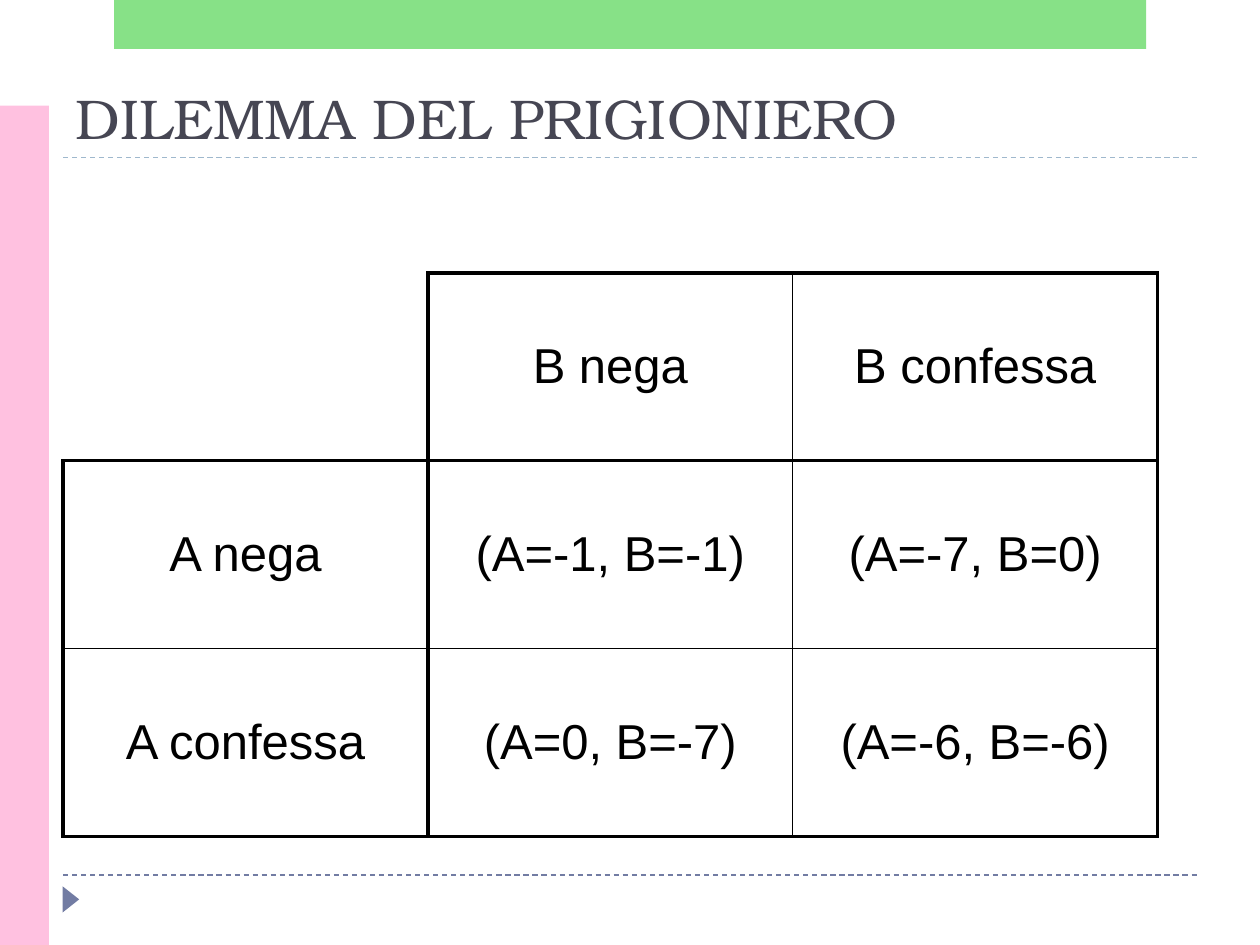
"""Builds the prisoner's dilemma payoff slide."""
from dataclasses import dataclass

from lxml import etree
from pptx import Presentation
from pptx.dml.color import RGBColor
from pptx.enum.dml import MSO_LINE
from pptx.enum.shapes import MSO_CONNECTOR, MSO_SHAPE
from pptx.enum.text import MSO_ANCHOR, MSO_AUTO_SIZE, PP_ALIGN
from pptx.oxml.ns import qn
from pptx.util import Pt

DASH = MSO_LINE.DASH
STRAIGHT = MSO_CONNECTOR.STRAIGHT
RECTANGLE, TRIANGLE = MSO_SHAPE.RECTANGLE, MSO_SHAPE.ISOSCELES_TRIANGLE
MIDDLE, BOTTOM = MSO_ANCHOR.MIDDLE, MSO_ANCHOR.BOTTOM
NO_FIT = MSO_AUTO_SIZE.NONE
LEFT, CENTER = PP_ALIGN.LEFT, PP_ALIGN.CENTER
TITLE_ONLY = 5


@dataclass(frozen=True)
class Theme:
    title_font: str = "TeX Gyre Bonum"
    table_font: str = "Arial"
    title_size: float = 32
    table_size: float = 28
    title: str = "464653"
    ink: str = "000000"
    accent: str = "727CA3"
    title_rule: str = "9FB8CD"
    side_band: str = "FFC1E0"
    top_band: str = "62D862"
    rule: float = 0.75
    thick: float = 2.25
    thin: float = 1


class SlideBuilder:
    def __init__(self, slide, theme):
        self.s = slide
        self.theme = theme

    def run(self, p, text, font, size, color):
        r = p.add_run()
        r.text = text
        r.font.name = font
        r.font.size = Pt(size)
        r.font.color.rgb = RGBColor.from_string(color)

    def title(self, text, x, y, w, h):
        sp = self.s.shapes.title
        sp.left, sp.top, sp.width, sp.height = Pt(x), Pt(y), Pt(w), Pt(h)
        tf = sp.text_frame
        tf.word_wrap = True
        tf.auto_size = NO_FIT
        tf.vertical_anchor = BOTTOM
        p = tf.paragraphs[0]
        p.alignment = LEFT
        self.run(p, text, self.theme.title_font, self.theme.title_size, self.theme.title)

    def shape(self, kind, x, y, w, h, color, rotation=0, opacity=100):
        sp = self.s.shapes.add_shape(kind, Pt(x), Pt(y), Pt(w), Pt(h))
        sp.shadow.inherit = False
        sp.rotation = rotation
        sp.fill.solid()
        sp.fill.fore_color.rgb = RGBColor.from_string(color)
        sp.line.fill.background()
        if opacity < 100:
            clr = sp.fill._xPr.find(qn("a:solidFill"))[0]
            etree.SubElement(clr, qn("a:alpha"), val=str(opacity * 1000))

    def rule(self, x1, x2, y, color):
        line = self.s.shapes.add_connector(STRAIGHT, Pt(x1), Pt(y), Pt(x2), Pt(y))
        line.line.color.rgb = RGBColor.from_string(color)
        line.line.width = Pt(self.theme.rule)
        line.line.dash_style = DASH
        etree.SubElement(line._element.spPr, qn("a:effectLst"))

    def border(self, cell, side, width):
        ln = etree.SubElement(cell._tc.get_or_add_tcPr(), qn(f"a:ln{side}"), w=str(Pt(width)))
        if width:
            fill = etree.SubElement(ln, qn("a:solidFill"))
            etree.SubElement(fill, qn("a:srgbClr"), val=self.theme.ink)
        else:
            etree.SubElement(ln, qn("a:noFill"))

    def payoff_table(self, rows, x, y, w, h):
        t = self.theme
        n = len(rows)
        table = self.s.shapes.add_table(n, n, Pt(x), Pt(y), Pt(w), Pt(h)).table
        table.first_row = table.horz_banding = False
        weights = [t.thick, t.thick, t.thin, t.thick]
        for i, texts in enumerate(rows):
            table.rows[i].height = Pt(h / n)
            table.columns[i].width = Pt(w / n)
            for j, text in enumerate(texts):
                cell = table.cell(i, j)
                self.border(cell, "L", weights[j] if text else 0)
                self.border(cell, "R", weights[j + 1])
                self.border(cell, "T", weights[i] if text else 0)
                self.border(cell, "B", weights[i + 1])
                cell.fill.background()
                cell.vertical_anchor = MIDDLE
                if text:
                    p = cell.text_frame.paragraphs[0]
                    p.alignment = CENTER
                    self.run(p, text, t.table_font, t.table_size, t.ink)


def main():
    prs = Presentation()
    prs.slide_width, prs.slide_height = Pt(720), Pt(540)
    theme = Theme()
    b = SlideBuilder(prs.slides.add_slide(prs.slide_layouts[TITLE_ONLY]), theme)
    b.rule(36, 684, 500, theme.accent)
    b.rule(36, 684, 90, theme.title_rule)
    b.shape(TRIANGLE, 33, 509.2, 15, 9.5, theme.accent, rotation=90)
    b.shape(RECTANGLE, 0, 60.3, 28, 479.7, theme.side_band)
    b.shape(RECTANGLE, 65.2, 0, 589.7, 28, theme.top_band, opacity=76)
    b.title("DILEMMA DEL PRIGIONIERO", 36, 39.6, 648, 50.4)
    b.payoff_table([
        ["", "B nega", "B confessa"],
        ["A nega", "(A=-1, B=-1)", "(A=-7, B=0)"],
        ["A confessa", "(A=0, B=-7)", "(A=-6, B=-6)"],
    ], 36, 156, 625.5, 322)
    prs.save("out.pptx")


if __name__ == "__main__":
    main()
